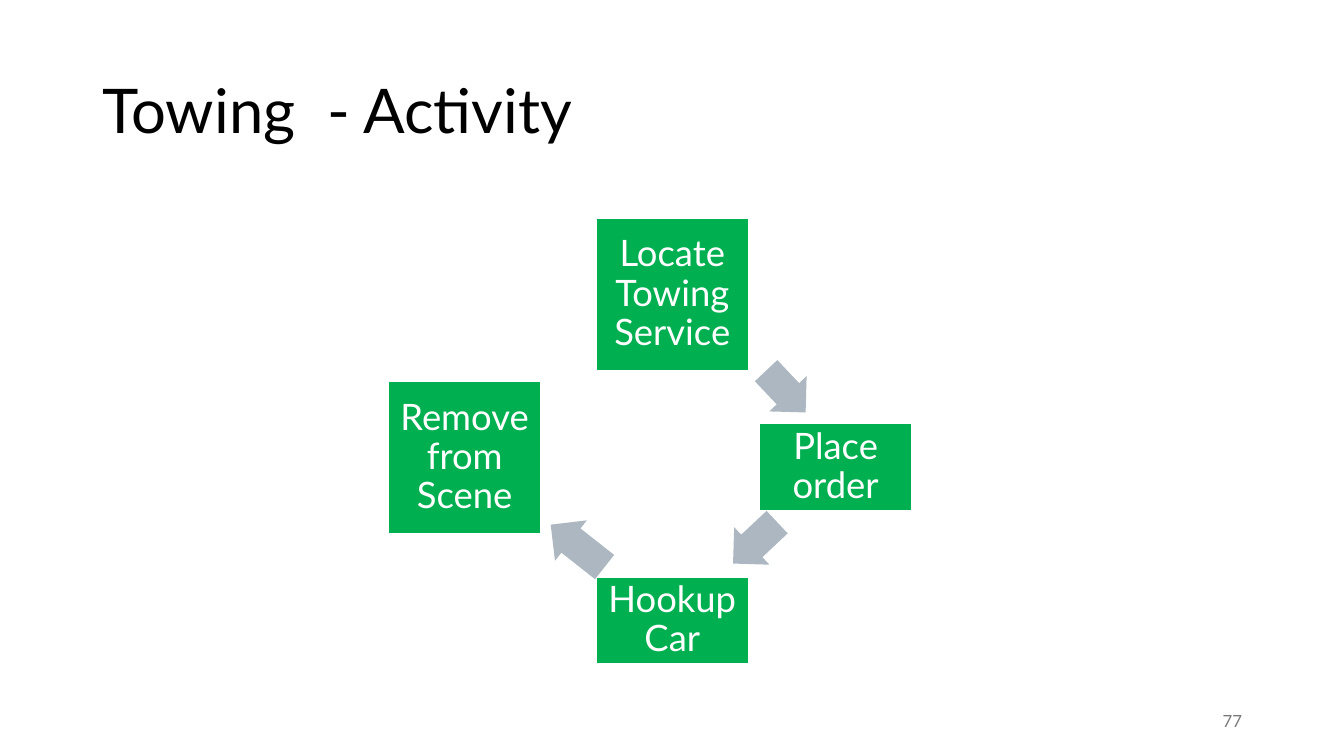
from dataclasses import dataclass
from typing import Optional

from pptx import Presentation
from pptx.dml.color import RGBColor as RGB
from pptx.enum.shapes import MSO_SHAPE as SHAPE
from pptx.enum.text import MSO_ANCHOR as ANCHOR, PP_ALIGN as ALIGN
from pptx.util import Inches, Pt

SLIDE_W, SLIDE_H = Inches(13.33), Inches(7.5)
FONT = "Lato"
COLORS = {
    "title": "000000",
    "box": "00B050",
    "box_text": "FFFFFF",
    "arrow": "ACB7C1",
    "number": "797979",
}


@dataclass
class Area:
    """Percentages of the slide's width and height."""
    left: float
    top: float
    width: float
    height: float

    def emu(self) -> tuple:
        return (int(SLIDE_W * self.left / 100), int(SLIDE_H * self.top / 100),
                int(SLIDE_W * self.width / 100), int(SLIDE_H * self.height / 100))


@dataclass
class Arrow:
    area: Area
    angle: float


@dataclass
class Step:
    text: str
    area: Area
    arrow: Optional[Arrow] = None


BOX_W, TALL, SHORT = 11.4, 20.27, 11.6
MID_X, ARROW_H = 44.33, 6.8

STEPS = [
    Step("Locate Towing Service", Area(MID_X, 28.8, BOX_W, TALL),
         Arrow(Area(56.33, 48.4, 4.28, ARROW_H), 46.6)),
    Step("Place order", Area(56.48, 56, BOX_W, SHORT),
         Arrow(Area(53.93, 68.4, 4.5, ARROW_H), 136.8)),
    Step("Hookup Car", Area(MID_X, 76.27, BOX_W, SHORT),
         Arrow(Area(40.43, 68.8, 5.1, ARROW_H), 218.2)),
    Step("Remove from Scene", Area(28.88, 50.4, BOX_W, TALL)),
]


def write(sp, text: str, *, size: float, color: str, align=ALIGN.LEFT,
          spacing: float = 1.0, inset: Optional[float] = None) -> None:
    tf = sp.text_frame
    tf.word_wrap = True
    tf.vertical_anchor = ANCHOR.MIDDLE
    if inset is not None:
        tf.margin_left = tf.margin_right = Inches(inset)
        tf.margin_top = tf.margin_bottom = Inches(inset)
    p = tf.paragraphs[0]
    p.alignment = align
    p.line_spacing = spacing
    r = p.add_run()
    r.text = text
    r.font.name = FONT
    r.font.size = Pt(size)
    r.font.color.rgb = RGB.from_string(COLORS[color])


def add_filled(s, kind, area: Area, color: str):
    sp = s.shapes.add_shape(kind, *area.emu())
    sp.shadow.inherit = False
    sp.fill.solid()
    sp.fill.fore_color.rgb = RGB.from_string(COLORS[color])
    sp.line.fill.background()
    return sp


def add_step(s, step: Step) -> None:
    sp = add_filled(s, SHAPE.RECTANGLE, step.area, "box")
    sp.line.color.rgb = RGB.from_string(COLORS["box_text"])
    sp.line.width = Pt(1.5)
    write(sp, step.text, size=26, color="box_text", align=ALIGN.CENTER,
          spacing=0.9, inset=0.04)
    if step.arrow:
        sp = add_filled(s, SHAPE.RIGHT_ARROW, step.arrow.area, "arrow")
        sp.adjustments[0], sp.adjustments[1] = 0.6, 0.5
        sp.rotation = step.arrow.angle


def main() -> None:
    prs = Presentation()
    prs.slide_width, prs.slide_height = SLIDE_W, SLIDE_H
    s = prs.slides.add_slide(prs.slide_layouts[6])
    title = s.shapes.add_textbox(*Area(6.9, 5.33, 86.25, 19.33).emu())
    write(title, "Towing  - Activity", size=44, color="title", spacing=0.9)
    for step in STEPS:
        add_step(s, step)
    number = s.shapes.add_textbox(*Area(70.65, 92.67, 22.5, 5.33).emu())
    write(number, "77", size=12, color="number", align=ALIGN.RIGHT)
    prs.save("out.pptx")


if __name__ == "__main__":
    main()
